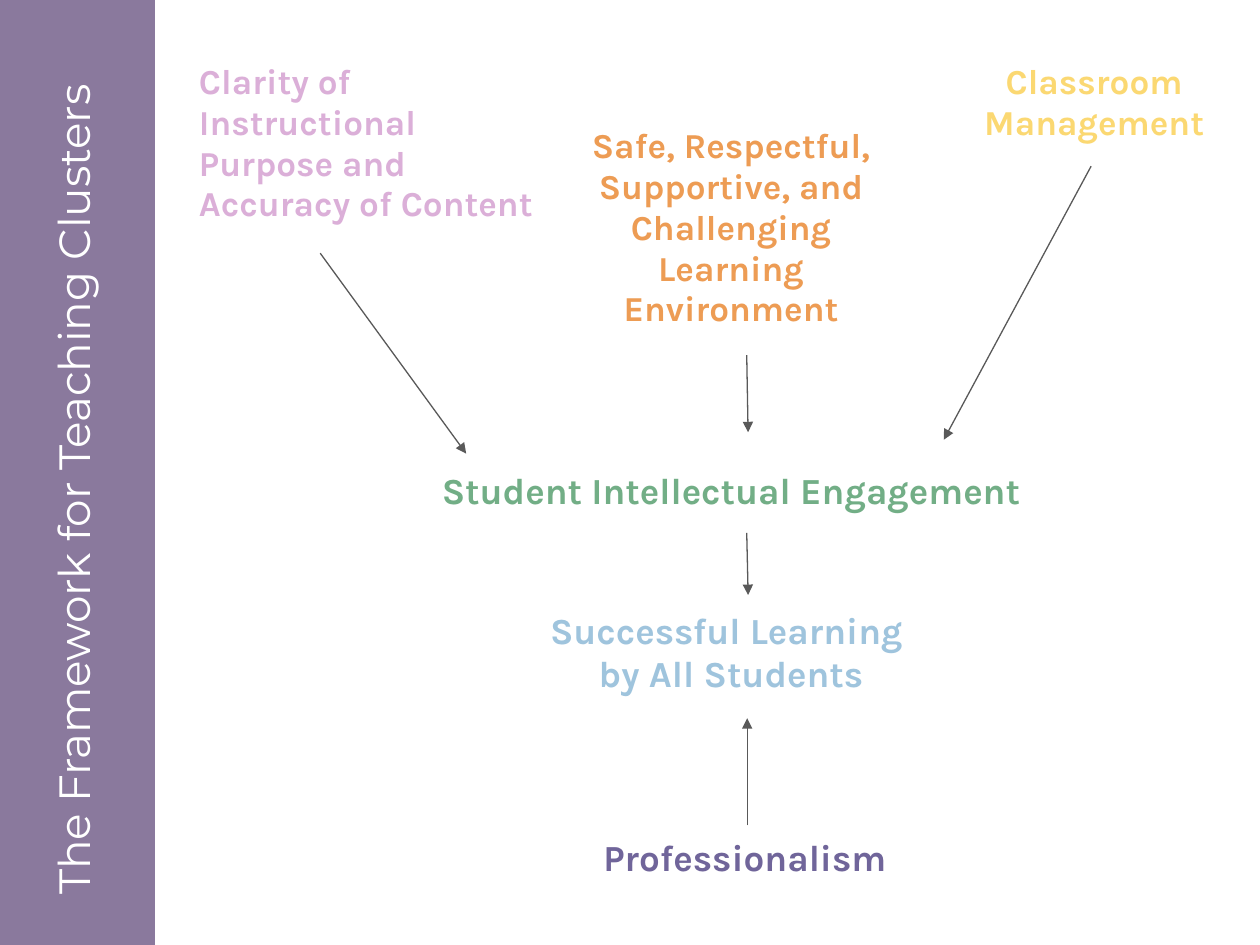
from pptx import Presentation
from pptx.dml.color import RGBColor
from pptx.enum.shapes import MSO_CONNECTOR as Connector, MSO_SHAPE as Shape
from pptx.enum.text import MSO_ANCHOR as Anchor, PP_ALIGN as Align
from pptx.oxml.ns import qn
from pptx.util import Pt
from lxml.etree import SubElement

COLORS = {
    "band": "7C6992", "white": "FFFFFF", "arrow": "595959",
    "clarity": "DBAFD8", "environment": "ED9C54", "management": "FBD872",
    "engagement": "72AE86", "learning": "9FC4DD", "professionalism": "70659A",
}


def color(name):
    return RGBColor.from_string(COLORS[name])


def write(frame, text, *, font, size, ink, bold=False, align=Align.LEFT):
    """Fill a text frame, one paragraph per line of text."""
    frame.word_wrap = True
    for index, line in enumerate(text.split("\n")):
        para = frame.add_paragraph() if index else frame.paragraphs[0]
        para.alignment = align
        span = para.add_run()
        span.text = line
        span.font.name = font
        span.font.size = Pt(size)
        span.font.bold = bold
        span.font.color.rgb = color(ink)


class ClusterSlide:
    title_font = "Montserrat"
    body_font = "Karla"

    def __init__(self, deck):
        self.page = deck.slides.add_slide(deck.slide_layouts[6])
        self.shapes = self.page.shapes

    def band(self, left, top, width, height, opacity):
        box = self.shapes.add_shape(Shape.RECTANGLE, Pt(left), Pt(top), Pt(width), Pt(height))
        box.shadow.inherit = False
        box.fill.solid()
        box.fill.fore_color.rgb = color("band")
        box.line.fill.background()
        fill = box.fill._xPr.find(qn("a:solidFill"))
        SubElement(fill[0], qn("a:alpha"), val=str(opacity * 1000))

    def title(self, text, left, top, width, height):
        box = self.shapes.add_textbox(Pt(left), Pt(top), Pt(width), Pt(height))
        box.rotation = 270
        frame = box.text_frame
        frame.margin_left = frame.margin_right = Pt(7.2)
        frame.margin_top = frame.margin_bottom = Pt(7.2)
        write(frame, text, font=self.title_font, size=25, ink="white")

    def grid(self, left, top, column_width, column_count, row_heights):
        table = self.shapes.add_table(
            len(row_heights), column_count, Pt(left), Pt(top),
            Pt(column_width * column_count), Pt(sum(row_heights))).table
        table.first_row = table.horz_banding = False
        for column in table.columns:
            column.width = Pt(column_width)
        for row, height in zip(table.rows, row_heights):
            row.height = Pt(height)
            for cell in row.cells:
                cell.fill.background()
        return table

    def cluster(self, cell, text, ink, size=21, align=Align.CENTER,
                anchor=Anchor.TOP, inset_left=7.2, inset_top=9.4):
        cell.margin_left, cell.margin_right = Pt(inset_left), Pt(7.2)
        cell.margin_top, cell.margin_bottom = Pt(inset_top), Pt(9.4)
        cell.vertical_anchor = anchor
        write(cell.text_frame, text, font=self.body_font, size=size,
              ink=ink, bold=True, align=align)

    def arrow(self, start, end):
        line = self.shapes.add_connector(Connector.STRAIGHT, *map(Pt, start + end))
        line.line.color.rgb = color("arrow")
        line.line.width = Pt(0.75)
        SubElement(line.line._get_or_add_ln(), qn("a:tailEnd"), type="triangle")
        SubElement(line._element.spPr, qn("a:effectLst"))


def main():
    deck = Presentation()
    deck.slide_width, deck.slide_height = Pt(720), Pt(540)
    slide = ClusterSlide(deck)

    # Side band with the vertical title
    slide.band(0, 0, 88.5, 540, opacity=89)
    slide.title("The Framework for Teaching Clusters", -198, 248.4, 487.4, 52.6)

    # Clusters: three on top, then one per full-width row
    table = slide.grid(106.5, 26, 207.5, 3, [209, 105, 105, 83.5])
    for row in range(1, 4):
        table.cell(row, 0).merge(table.cell(row, 2))
    slide.cluster(table.cell(0, 0), "Clarity of Instructional Purpose and Accuracy of Content",
                  "clarity", size=20, align=Align.LEFT)
    slide.cluster(table.cell(0, 1),
                  "Safe, Respectful, Supportive, and Challenging Learning Environment",
                  "environment", size=20, anchor=Anchor.MIDDLE)
    slide.cluster(table.cell(0, 2), "Classroom Management", "management", size=20)
    slide.cluster(table.cell(1, 0), "Student Intellectual Engagement", "engagement",
                  inset_top=34)
    slide.cluster(table.cell(2, 0), "Successful Learning \nby All Students", "learning")
    slide.cluster(table.cell(3, 0), "Professionalism", "professionalism",
                  inset_left=23, inset_top=34)

    # Arrows between the clusters
    for start, end in [
        ((183, 144.7), (266.4, 259.2)),
        ((623.5, 95), (539.3, 251.3)),
        ((426.7, 304.5), (427.5, 340)),
        ((426.7, 203), (427.5, 247)),
        ((427, 471.6), (427, 410.4)),
    ]:
        slide.arrow(start, end)

    deck.save("out.pptx")


if __name__ == "__main__":
    main()
